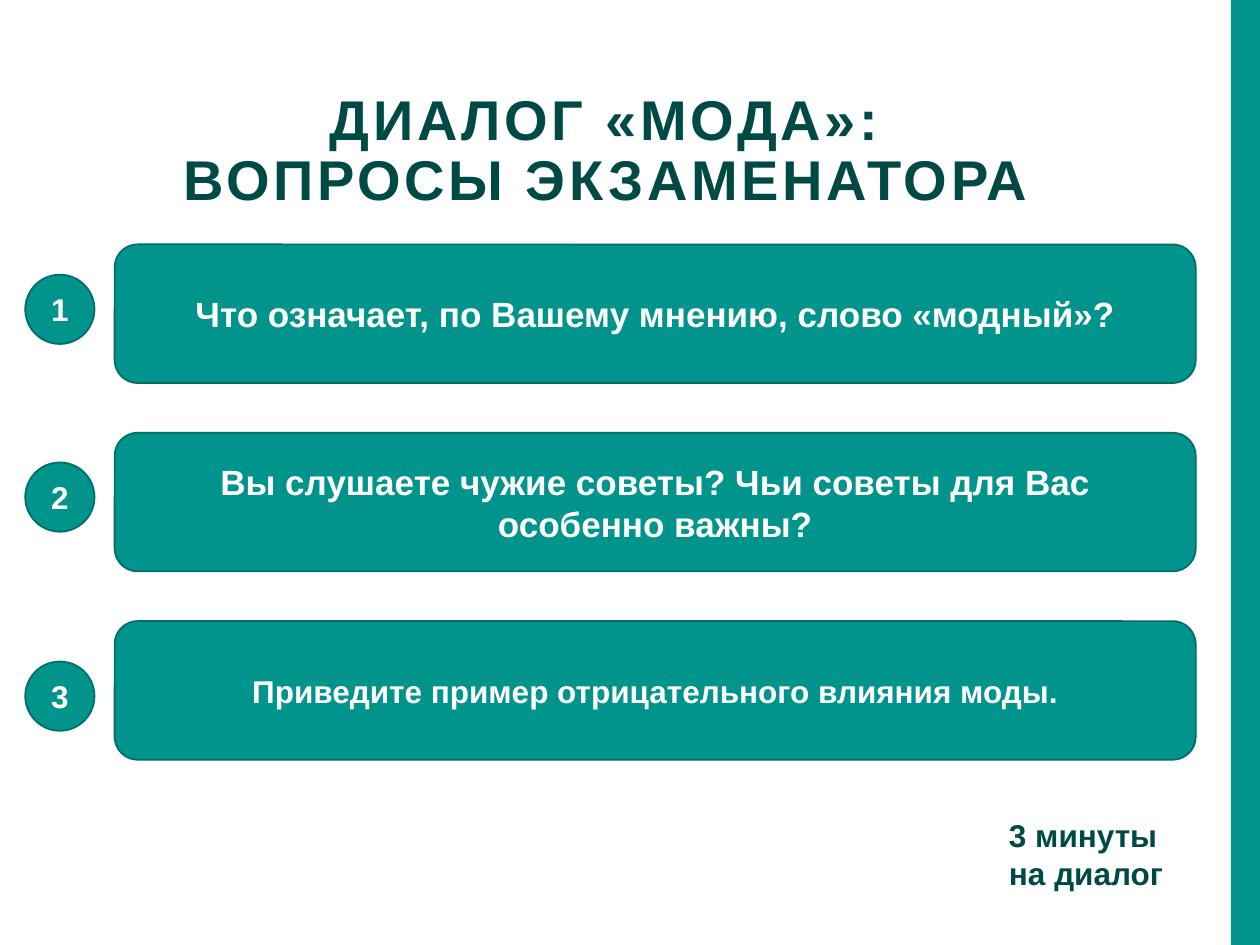
"""Build the slide with the examiner's questions for the fashion dialogue."""
from pptx import Presentation
from pptx.dml.color import RGBColor
from pptx.enum.shapes import MSO_SHAPE
from pptx.enum.text import MSO_ANCHOR, PP_ALIGN
from pptx.util import Inches, Pt

TITLE = "ДИАЛОГ «МОДА»:\vВОПРОСЫ ЭКЗАМЕНАТОРА"
ASKS = [
    ("Что означает, по Вашему мнению, слово «модный»?", 20, 2.18),
    ("Вы слушаете чужие советы? Чьи советы для Вас особенно важны?", 20, 3.67),
    ("Приведите пример отрицательного влияния моды.", 18, 5.25),
]
NOTE = "3 минуты\nна диалог"
TEAL, EDGE, DARK, WHITE = "00948C", "006D68", "004A46", "FFFFFF"
LEFT, TOP, STEP = 0.91, 1.94, 1.495


def color(code):
    return RGBColor.from_string(code)


def write(shape, text, size, ink, align, anchor):
    frame = shape.text_frame
    frame.word_wrap = True
    frame.vertical_anchor = anchor
    frame.text = text
    for para in frame.paragraphs:
        para.alignment = align
        for run in para.runs:
            run.font.name = "Arial"
            run.font.size = Pt(size)
            run.font.bold = True
            run.font.color.rgb = color(ink)
    return frame


def draw(slide, kind, box, edge=None):
    shape = slide.shapes.add_shape(kind, *map(Inches, box))
    shape.shadow.inherit = False
    shape.fill.solid()
    shape.fill.fore_color.rgb = color(TEAL)
    if edge:
        shape.line.color.rgb = color(edge)
        shape.line.width = Pt(1)
    else:
        shape.line.fill.background()
    return shape


def label(slide, box, text, size, align):
    shape = slide.shapes.add_textbox(*map(Inches, box))
    return write(shape, text, size, DARK, align, MSO_ANCHOR.TOP)


def main():
    deck = Presentation()
    deck.slide_width, deck.slide_height = Inches(10), Inches(7.5)
    slide = deck.slides.add_slide(deck.slide_layouts[6])
    draw(slide, MSO_SHAPE.RECTANGLE, (9.77, 0, 0.23, 7.5))

    head = label(slide, (LEFT, 0.68, 7.8, 1.26), TITLE, 32, PP_ALIGN.CENTER)
    head.paragraphs[0].line_spacing = 0.9
    for run in head.paragraphs[0].runs:
        run.font._element.set("spc", "200")

    for i, (ask, size, high) in enumerate(ASKS):
        card = (LEFT, TOP + i * STEP, 8.58, 1.1)
        disc = (0.2, high, 0.55, 0.55)
        for kind, box, text, points in (
            (MSO_SHAPE.ROUNDED_RECTANGLE, card, ask, size),
            (MSO_SHAPE.OVAL, disc, str(i + 1), 18),
        ):
            shape = draw(slide, kind, box, EDGE)
            write(shape, text, points, WHITE, PP_ALIGN.CENTER, MSO_ANCHOR.MIDDLE)

    label(slide, (7.91, 6.43, 1.56, 0.71), NOTE, 18, PP_ALIGN.LEFT)
    deck.save("out.pptx")


if __name__ == "__main__":
    main()
